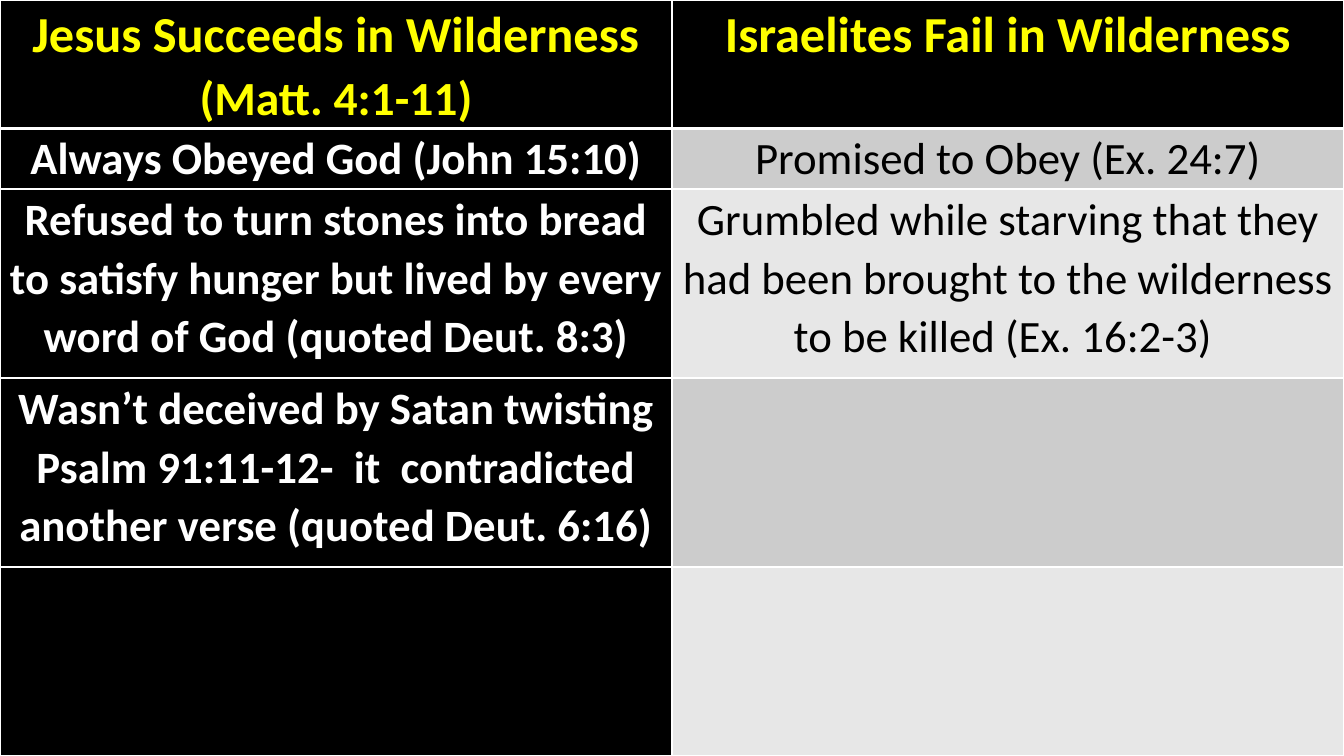
from lxml import etree
from pptx import Presentation
from pptx.dml.color import RGBColor
from pptx.enum.text import PP_ALIGN
from pptx.oxml.ns import qn
from pptx.util import Inches, Pt

CENTER = PP_ALIGN.CENTER
SLIDE_W, SLIDE_H = Inches(13.33), Inches(7.5)
BLANK_LAYOUT = 6

BLACK, WHITE, YELLOW = "000000", "FFFFFF", "FFFF00"
BAND_FILLS = ("CCCCCC", "E7E7E7")

# Row heights as shares of the slide; the last row takes what remains
UPPER_ROWS = (0.17, 0.08, 0.25, 0.25)
ROW_SHARES = UPPER_ROWS + (1 - sum(UPPER_ROWS),)

# Each heading is a list of (text, size) pieces
HEADINGS = (
    (("Jesus Succeeds in Wilderness ", 36), ("(Matt. 4:1-11)", 34)),
    (("Israelites Fail in Wilderness", 36),),
)
COMPARISONS = (
    ("Always Obeyed God (John 15:10)", "Promised to Obey (Ex. 24:7)"),
    ("Refused to turn stones into bread to satisfy hunger but lived by every "
     "word of God (quoted Deut. 8:3)",
     "Grumbled while starving that they had been brought to the wilderness "
     "to be killed (Ex. 16:2-3) "),
    ("Wasn’t deceived by Satan twisting Psalm 91:11-12-  it  contradicted "
     "another verse (quoted Deut. 6:16)", ""),
    ("", ""),
)


def rgb(hex_code):
    return RGBColor.from_string(hex_code)


def add_text(paragraph, text, size=32, color=BLACK, bold=False):
    paragraph.alignment = CENTER
    paragraph.line_spacing = 1.07
    run = paragraph.add_run()
    run.text = text
    run.font.name = "Calibri"
    run.font.size = Pt(size)
    run.font.bold = bold
    run.font.color.rgb = rgb(color)


def add_borders(cell, **widths):
    """Draw white borders; widths in points by side: L, R, T, B."""
    properties = cell._tc.get_or_add_tcPr()
    for position, side in enumerate("LRTB"):
        line = etree.Element(qn("a:ln" + side), w=str(Pt(widths.get(side, 1))))
        fill = etree.SubElement(line, qn("a:solidFill"))
        etree.SubElement(fill, qn("a:srgbClr"), val=WHITE)
        properties.insert(position, line)


def style_cell(cell, fill, **border_widths):
    cell.margin_left = cell.margin_right = Inches(0.07)
    cell.margin_top = cell.margin_bottom = 0
    cell.fill.solid()
    cell.fill.fore_color.rgb = rgb(fill)
    add_borders(cell, **border_widths)


def add_grid(slide):
    grid = slide.shapes.add_table(
        len(ROW_SHARES), len(HEADINGS), 0, 0, SLIDE_W, SLIDE_H).table
    for row, share in zip(grid.rows, ROW_SHARES):
        row.height = int(SLIDE_H * share)
    return grid


def fill_headings(grid):
    for column, pieces in enumerate(HEADINGS):
        heading = grid.cell(0, column)
        style_cell(heading, BLACK, B=3)
        for text, size in pieces:
            add_text(heading.text_frame.paragraphs[0], text,
                     size=size, color=YELLOW, bold=True)


def fill_comparisons(grid):
    for index, (jesus, israelites) in enumerate(COMPARISONS):
        sides = ((jesus, BLACK, WHITE, True),
                 (israelites, BAND_FILLS[index % 2], BLACK, False))
        for column, (text, fill, color, bold) in enumerate(sides):
            cell = grid.cell(index + 1, column)
            style_cell(cell, fill, T=1 if index else 3)
            if text:
                add_text(cell.text_frame.paragraphs[0], text,
                         color=color, bold=bold)


def main():
    deck = Presentation()
    deck.slide_width, deck.slide_height = SLIDE_W, SLIDE_H
    slide = deck.slides.add_slide(deck.slide_layouts[BLANK_LAYOUT])
    slide.background.fill.solid()
    slide.background.fill.fore_color.rgb = rgb(BLACK)

    # Comparison table covering the slide
    grid = add_grid(slide)
    fill_headings(grid)
    fill_comparisons(grid)

    deck.save("out.pptx")


if __name__ == "__main__":
    main()
